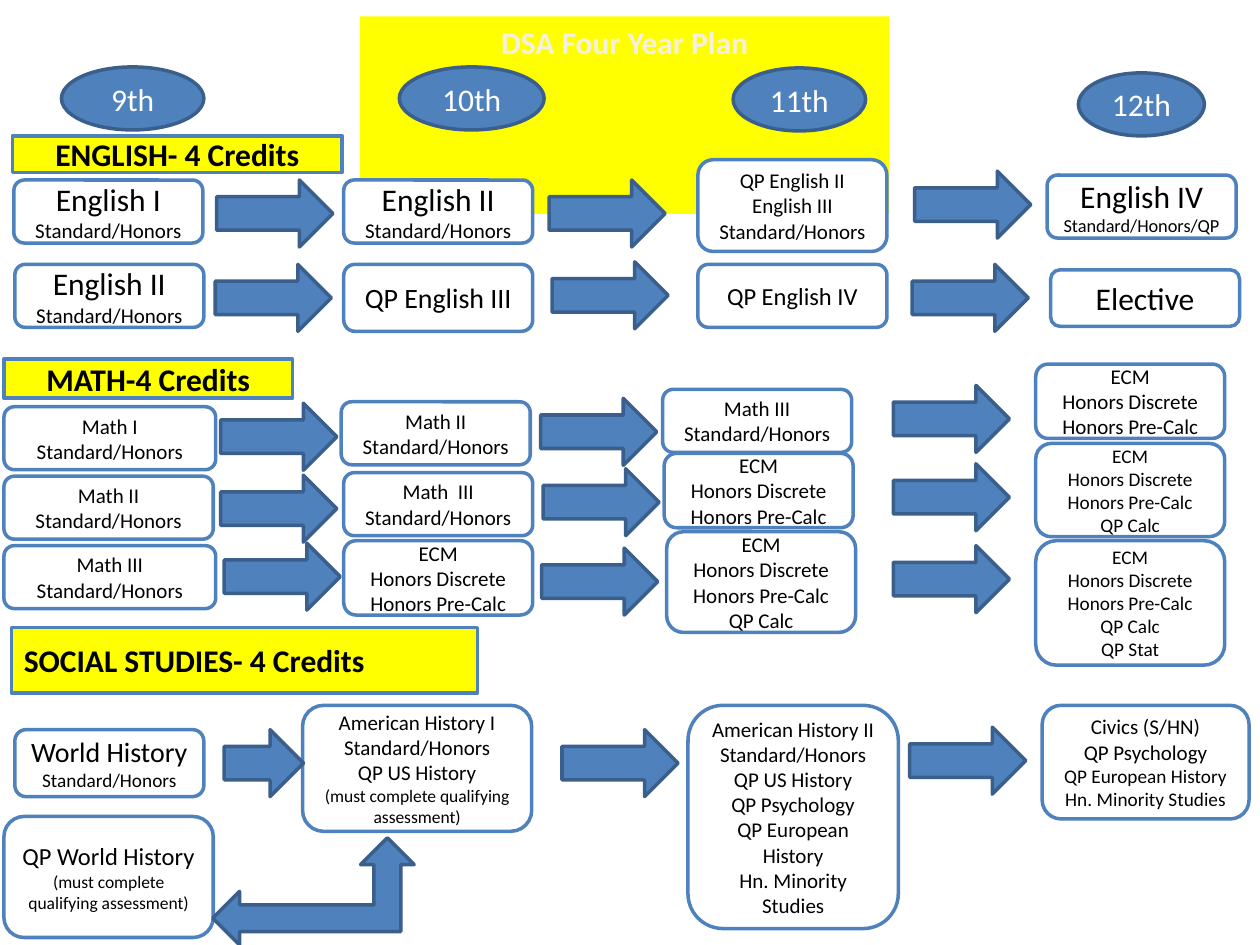
from pptx import Presentation
from pptx import util as u
from pptx.dml.color import RGBColor
from pptx.enum import shapes, text

COLORS = {
    "blue": "4F81BD",
    "navy": "3A5F8C",
    "yellow": "FFFF00",
    "white": "FFFFFF",
    "black": "000000",
    "cream": "F4F1E3",
}
KIND = shapes.MSO_SHAPE
ALIGN = text.PP_ALIGN
ANCHOR = text.MSO_ANCHOR
COURSE_W, COURSE_H = 3.81, 1.27
ARROW_W, ARROW_H = 2.34, 1.35
LEVEL = "Standard/Honors"
ECM = "ECM\nHonors Discrete\nHonors Pre-Calc"
QUALIFY = "(must complete qualifying assessment)"


def rgb(name):
    return RGBColor.from_string(COLORS[name])


def write(sp, content, sizes=(12,), color="black", bold=False,
          align=ALIGN.CENTER, anchor=ANCHOR.MIDDLE):
    tf = sp.text_frame
    tf.word_wrap = True
    tf.vertical_anchor = anchor
    for i, line in enumerate(content.split("\n")):
        p = tf.paragraphs[0] if i == 0 else tf.add_paragraph()
        p.alignment = align
        r = p.add_run()
        r.text = line
        r.font.name = "Calibri"
        r.font.size = u.Pt(sizes[min(i, len(sizes) - 1)])
        r.font.bold = bold
        r.font.color.rgb = rgb(color)


def add_box(s, kind, origin, x, y, w, h, fill, line):
    left, top = origin
    sp = s.shapes.add_shape(kind, u.Cm(left + x), u.Cm(top + y), u.Cm(w), u.Cm(h))
    sp.shadow.inherit = False
    sp.fill.solid()
    sp.fill.fore_color.rgb = rgb(fill)
    sp.line.color.rgb = rgb(line)
    sp.line.width = u.Pt(2)
    return sp


def add_label(s, origin, content, x, w, h, align=ALIGN.CENTER):
    sp = add_box(s, KIND.RECTANGLE, origin, x, 0, w, h, "yellow", "blue")
    write(sp, content, sizes=(18,), bold=True, align=align)


def add_course(s, origin, content, x, y, w=COURSE_W, h=COURSE_H, sizes=(12,)):
    sp = add_box(s, KIND.ROUNDED_RECTANGLE, origin, x, y, w, h, "white", "blue")
    write(sp, content, sizes=sizes)


def add_arrow(s, origin, x, y, w=ARROW_W, h=ARROW_H, kind=KIND.RIGHT_ARROW):
    add_box(s, kind, origin, x, y, w, h, "blue", "navy")


def header(s, origin):
    left, top = origin
    title = s.shapes.title
    title.left, title.top = u.Cm(left + 7.26), u.Cm(top + 0.33)
    title.width, title.height = u.Cm(10.67), u.Cm(1.02)
    title.fill.solid()
    title.fill.fore_color.rgb = rgb("yellow")
    write(title, "DSA Four Year Plan", sizes=(18,), color="cream", bold=True,
          anchor=ANCHOR.TOP)
    title.text_frame.auto_size = text.MSO_AUTO_SIZE.SHAPE_TO_FIT_TEXT
    grades = [("9th", 1.24, 1.35, 2.87), ("10th", 8.05, 1.35, 2.92),
              ("11th", 14.78, 1.37, 2.67), ("12th", 21.74, 1.47, 2.54)]
    for grade, x, y, w in grades:
        sp = add_box(s, KIND.FLOWCHART_CONNECTOR, origin, x, y, w, 1.27, "blue", "navy")
        write(sp, grade, sizes=(18,), color="white")


def english(s, origin):
    add_label(s, origin, "ENGLISH- 4 Credits", 0.25, 6.65, 0.74)
    courses = [
        (f"English I\n{LEVEL}", 0.28, 0.89, COURSE_H, (18, 12)),
        (f"English II\n{LEVEL}", 6.93, 0.89, COURSE_H, (18, 12)),
        (f"QP English II\nEnglish III\n{LEVEL}", 14.07, 0.48, 1.85, (12,)),
        (f"English IV\n{LEVEL}/QP", 21.11, 0.79, COURSE_H, (18, 10.5)),
        (f"English II\n{LEVEL}", 0.3, 2.59, COURSE_H, (18, 12)),
        ("QP English III", 6.93, 2.59, 1.35, (16,)),
        ("QP English IV", 14.07, 2.59, COURSE_H, (14,)),
        ("Elective", 21.18, 2.7, 1.14, (18,)),
    ]
    for content, x, y, h, sizes in courses:
        add_course(s, origin, content, x, y, h=h, sizes=sizes)
    for x, y in [(4.37, 0.89), (11.07, 0.89), (18.44, 0.71),
                 (4.34, 2.59), (11.13, 2.54), (18.39, 2.59)]:
        add_arrow(s, origin, x, y)


def math_credits(s, origin):
    add_label(s, origin, "MATH-4 Credits", 0.08, 5.82, 0.79)
    courses = [
        (f"Math I\n{LEVEL}", 0.08, 0.96, 4.27, COURSE_H, 12),
        (f"Math II\n{LEVEL}", 6.88, 0.86, COURSE_W, COURSE_H, 12),
        (f"Math III\n{LEVEL}", 13.36, 0.61, COURSE_W, COURSE_H, 12),
        (ECM, 20.88, 0.1, COURSE_W, 1.5, 12),
        (f"Math II\n{LEVEL}", 0.08, 2.36, 4.22, COURSE_H, 12),
        (f"Math  III\n{LEVEL}", 6.93, 2.29, COURSE_W, COURSE_H, 12),
        (ECM, 13.39, 1.9, COURSE_W, 1.5, 12),
        (f"{ECM}\nQP Calc", 20.88, 1.7, COURSE_W, 1.88, 11),
        (f"Math III\n{LEVEL}", 0.08, 3.76, 4.27, COURSE_H, 12),
        (ECM, 6.93, 3.66, COURSE_W, 1.5, 12),
        (f"{ECM}\nQP Calc", 13.44, 3.48, COURSE_W, 2.03, 12),
        (f"{ECM}\nQP Calc\nQP Stat", 20.88, 3.66, COURSE_W, 2.51, 11),
    ]
    for content, x, y, w, h, size in courses:
        add_course(s, origin, content, x, y, w, h, (size,))
    for x, y in [(4.45, 0.89), (10.9, 0.79), (18.01, 0.53),
                 (4.45, 2.34), (10.95, 2.21), (18.01, 2.11),
                 (4.52, 3.71), (10.92, 3.81), (18.01, 3.76)]:
        add_arrow(s, origin, x, y)


def social_studies(s, origin):
    add_label(s, origin, "SOCIAL STUDIES- 4 Credits", 0.23, 9.4, 1.32, ALIGN.LEFT)
    courses = [
        (f"World History\n{LEVEL}", 0.3, 2.06, COURSE_W, 1.35, (16, 11)),
        (f"QP World History\n{QUALIFY}", 0.08, 3.81, 4.22, 2.44, (14, 10)),
        (f"American History I\n{LEVEL}\nQP US History\n{QUALIFY}",
         6.1, 1.57, 4.62, 2.54, (12, 12, 12, 10)),
        (f"American History II\n{LEVEL}\nQP US History\nQP Psychology\n"
         "QP European History\nHn. Minority Studies", 13.87, 1.57, 4.24, 4.5, (12,)),
        ("Civics (S/HN)\nQP Psychology\nQP European History\nHn. Minority Studies",
         21.01, 1.57, 4.17, 2.29, (12, 12, 11)),
    ]
    for content, x, y, w, h, sizes in courses:
        add_course(s, origin, content, x, y, w, h, sizes)
    for x, y, w in [(4.52, 2.06, 1.6), (11.33, 2.06, ARROW_W), (18.34, 2.01, ARROW_W)]:
        add_arrow(s, origin, x, y, w)
    add_arrow(s, origin, 4.29, 4.24, 4.06, 2.16, KIND.LEFT_UP_ARROW)


def main():
    prs = Presentation()
    prs.slide_width, prs.slide_height = u.Cm(25.4), u.Cm(19.05)
    s = prs.slides.add_slide(prs.slide_layouts[5])
    header(s, (0, 0))
    english(s, (0, 2.74))
    math_credits(s, (0, 7.24))
    social_studies(s, (0, 12.65))
    prs.save("out.pptx")


if __name__ == "__main__":
    main()
